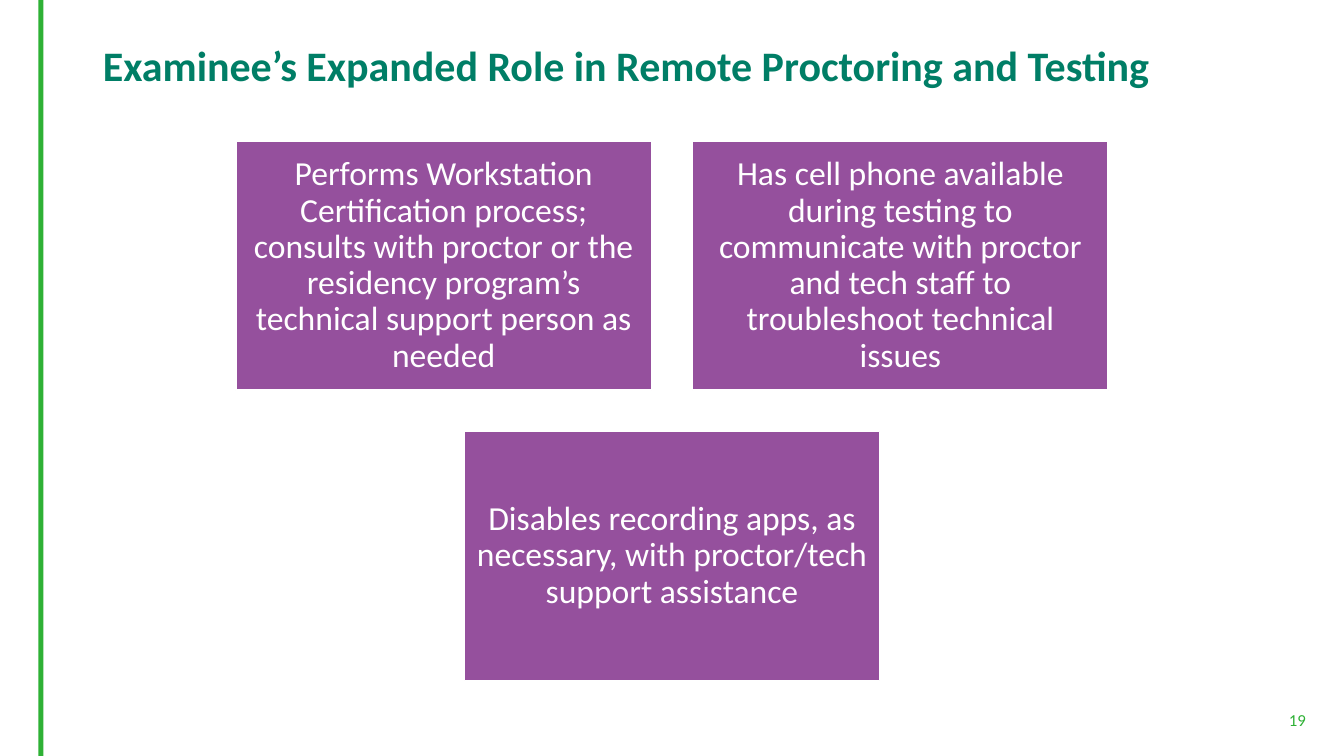
from pptx import Presentation
from pptx.dml.color import RGBColor
from pptx.enum.shapes import MSO_SHAPE as SHAPE
from pptx.enum.text import MSO_ANCHOR as ANCHOR, PP_ALIGN as ALIGN
from pptx.util import Inches, Pt

GREEN, TEAL, PURPLE, WHITE = "2EB135", "007E66", "95509D", "FFFFFF"


def rgb(value):
    return RGBColor.from_string(value)


def write(tf, text, size, color, align, anchor, spacing=1.0, bold=False):
    tf.word_wrap = True
    tf.vertical_anchor = anchor
    p = tf.paragraphs[0]
    p.alignment = align
    p.line_spacing = spacing
    r = p.add_run()
    r.text = text
    r.font.name = "Calibri"
    r.font.size = Pt(size)
    r.font.bold = bold
    r.font.color.rgb = rgb(color)


prs = Presentation()
prs.slide_width = Inches(13.33)
prs.slide_height = Inches(7.5)
s = prs.slides.add_slide(prs.slide_layouts[5])

bar = s.shapes.add_shape(SHAPE.RECTANGLE, Inches(0.38), 0, Inches(0.05), prs.slide_height)
bar.shadow.inherit = False
bar.fill.solid()
bar.fill.fore_color.rgb = rgb(GREEN)
bar.line.fill.background()

title = s.shapes.title
title.left, title.top = Inches(0.92), Inches(0.4)
title.width, title.height = Inches(11.5), Inches(1)
write(title.text_frame, "Examinee’s Expanded Role in Remote Proctoring and Testing",
      30, TEAL, ALIGN.LEFT, ANCHOR.TOP, 0.9, True)

number = s.shapes.add_textbox(Inches(9.57), Inches(6.99), Inches(3.48), Inches(0.3))
write(number.text_frame, "19", 12, GREEN, ALIGN.RIGHT, ANCHOR.BOTTOM)

rows = [
    ["Performs Workstation Certification process; consults with proctor or the "
     "residency program’s technical support person as needed",
     "Has cell phone available during testing to communicate with proctor and "
     "tech staff to troubleshoot technical issues"],
    ["Disables recording apps, as necessary, with proctor/tech support assistance"],
]
card_w, card_h, gap = 4.12, 2.47, 0.41
center, top = 13.33 / 2, 1.4

for i, row in enumerate(rows):
    left = center - (len(row) * (card_w + gap) - gap) / 2
    for j, text in enumerate(row):
        card = s.shapes.add_shape(
            SHAPE.RECTANGLE,
            Inches(left + j * (card_w + gap)), Inches(top + i * (card_h + gap)),
            Inches(card_w), Inches(card_h))
        card.shadow.inherit = False
        card.fill.solid()
        card.fill.fore_color.rgb = rgb(PURPLE)
        card.line.color.rgb = rgb(WHITE)
        card.line.width = Pt(1)
        tf = card.text_frame
        tf.margin_left = tf.margin_right = tf.margin_top = tf.margin_bottom = Inches(0.1)
        write(tf, text, 24, WHITE, ALIGN.CENTER, ANCHOR.MIDDLE, 0.9)

prs.save("out.pptx")
